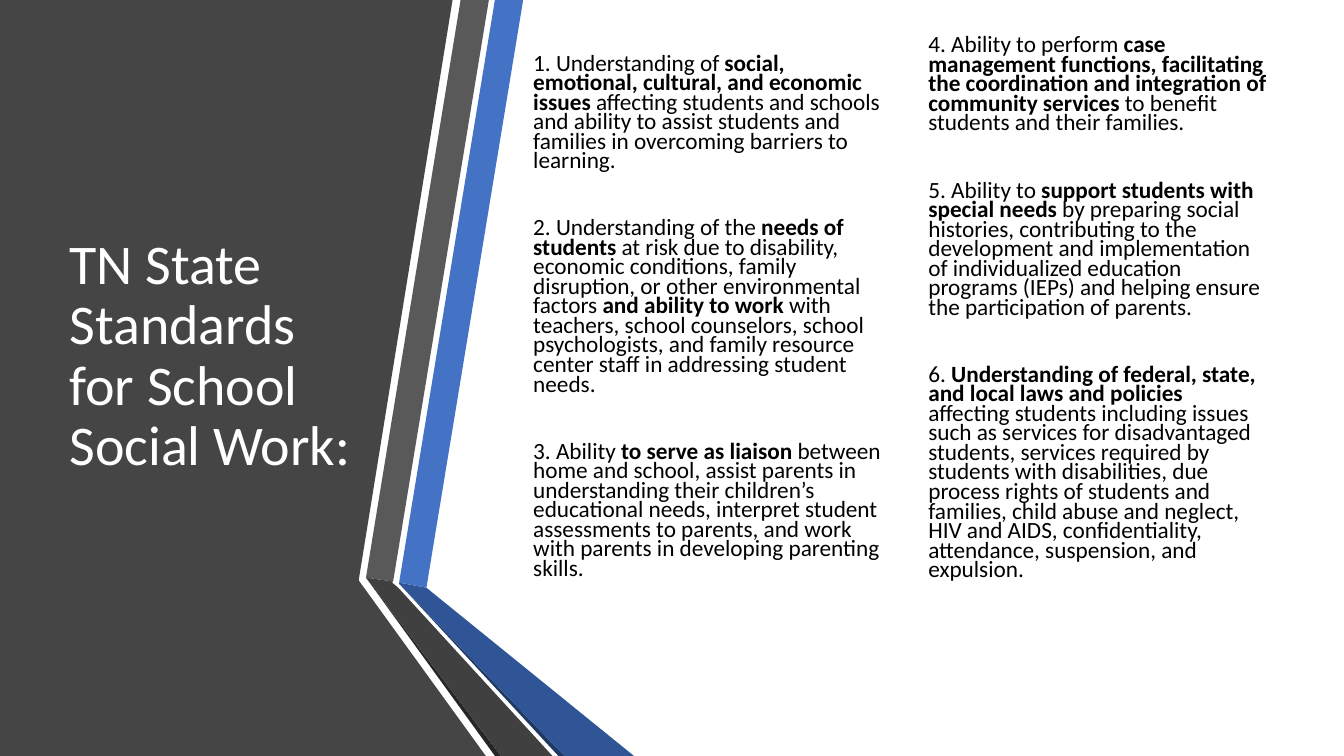
import pptx
import pptx.dml.color
import pptx.enum.text
import pptx.oxml.ns
import pptx.util

LEFT_STANDARDS = [
    "1. Understanding of *social, emotional, cultural, and economic issues* affecting students "
    "and schools and ability to assist students and families in overcoming barriers to learning.",
    "2. Understanding of the *needs of students *at risk due to disability, economic conditions, "
    "family disruption, or other environmental factors *and ability to work *with teachers, "
    "school counselors, school psychologists, and family resource center staff in addressing "
    "student needs.",
    "3. Ability *to serve as liaison* between home and school, assist parents in understanding "
    "their children’s educational needs, interpret student assessments to parents, and work "
    "with parents in developing parenting skills.",
]
RIGHT_STANDARDS = [
    "4. Ability to perform *case management functions, facilitating the coordination and "
    "integration of community services *to benefit students and their families.",
    "5. Ability to *support students with special needs* by preparing social histories, "
    "contributing to the development and implementation of individualized education programs "
    "(IEPs) and helping ensure the participation of parents.",
    "6. *Understanding of federal, state, and local laws and policies *affecting students "
    "including issues such as services for disadvantaged students, services required by "
    "students with disabilities, due process rights of students and families, child abuse and "
    "neglect, HIV and AIDS, confidentiality, attendance, suspension, and expulsion.",
]
PANEL = [(0, 0), (323.3, 0), (256.3, 414), (256.3, 414.7), (347, 540), (0, 540)]
BANDS = [
    ("4472C4", [(285.1, 416.2), (304.6, 419.8), (373.7, 0), (353.5, 0)]),
    ("595959", [(349.2, 0), (329, 0), (261.4, 412.6), (280.8, 415.4)]),
    ("262626", [(261.4, 412.6), (353.5, 540), (357.8, 540)]),
    ("203864", [(285.1, 416.9), (398.9, 540), (403.2, 540)]),
    ("2F5597", [(285.1, 416.9), (403.2, 540), (452.9, 540), (304.6, 419.8), (285.1, 416.2)]),
    ("404040", [(394.6, 540), (284.4, 419.8), (280.1, 416.2), (280.8, 415.4),
                (261.4, 412.6), (357.8, 540)]),
]


def color(value):
    """Turn a hex string into a colour."""
    return pptx.dml.color.RGBColor.from_string(value)


class StandardsSlide:
    """Hold the slide and its text style, and add each kind of element."""

    font_name = "Calibri"
    body_size = 16.6
    space_before = 10
    item_gap = 34

    def __init__(self, presentation):
        """Add a slide with a title and two text placeholders."""
        self.slide = presentation.slides.add_slide(presentation.slide_layouts[3])

    def outline(self, shapes, fill, points):
        """Draw a closed filled polygon."""
        vertices = [(pptx.util.Pt(x), pptx.util.Pt(y)) for x, y in points]
        builder = shapes.build_freeform(*vertices[0])
        builder.add_line_segments(vertices[1:], close=True)
        shape = builder.convert_to_shape()
        shape.shadow.inherit = False
        shape.fill.solid()
        shape.fill.fore_color.rgb = color(fill)
        shape.line.fill.background()

    def bands(self, bands):
        """Draw the folded bands as one group."""
        group = self.slide.shapes.add_group_shape()
        for fill, points in bands:
            self.outline(group.shapes, fill, points)

    def place(self, shape, left, top, width, height):
        """Move a placeholder to the front and return its text frame."""
        self.slide.shapes._spTree.append(shape._element)
        shape.left, shape.top = pptx.util.Pt(left), pptx.util.Pt(top)
        shape.width, shape.height = pptx.util.Pt(width), pptx.util.Pt(height)
        frame = shape.text_frame
        frame.word_wrap = True
        frame.auto_size = pptx.enum.text.MSO_AUTO_SIZE.NONE
        return frame

    def format_run(self, run, size, fill, bold=False):
        """Give a run its font."""
        run.font.name = self.font_name
        run.font.size = pptx.util.Pt(size)
        run.font.bold = bold
        run.font.color.rgb = color(fill)

    def title(self, text, box):
        """Fill the title placeholder."""
        frame = self.place(self.slide.shapes.title, *box)
        frame.text = text
        frame.vertical_anchor = pptx.enum.text.MSO_ANCHOR.MIDDLE
        paragraph = frame.paragraphs[0]
        paragraph.alignment = pptx.enum.text.PP_ALIGN.LEFT
        paragraph.line_spacing = 0.9
        self.format_run(paragraph.runs[0], 40, "FFFFFF")

    def standards(self, index, items, box):
        """Fill a body placeholder, with bold between asterisks."""
        frame = self.place(self.slide.placeholders[index], *box)
        frame.vertical_anchor = pptx.enum.text.MSO_ANCHOR.TOP
        for number, item in enumerate(items):
            paragraph = frame.add_paragraph() if number else frame.paragraphs[0]
            paragraph.line_spacing = 0.7
            paragraph.space_before = pptx.util.Pt(self.item_gap if number else self.space_before)
            properties = paragraph._p.get_or_add_pPr()
            properties.set("marL", "0")
            properties.set("indent", "0")
            properties.append(pptx.oxml.parse_xml(
                "<a:buNone %s/>" % pptx.oxml.ns.nsdecls("a")))
            for position, part in enumerate(item.split("*")):
                run = paragraph.add_run()
                run.text = part
                self.format_run(run, self.body_size, "000000", position % 2 == 1)


def main():
    """Build the slide and save it."""
    presentation = pptx.Presentation()
    presentation.slide_width = pptx.util.Pt(960)
    presentation.slide_height = pptx.util.Pt(540)
    page = StandardsSlide(presentation)
    page.outline(page.slide.shapes, "454545", PANEL)
    page.bands(BANDS)
    page.title("TN State Standards for School Social Work:", (42.5, 54, 219, 402))
    page.standards(1, LEFT_STANDARDS, (373.7, 36, 269.3, 540))
    page.standards(2, RIGHT_STANDARDS, (655.9, 23, 256.3, 439))
    presentation.save("out.pptx")


if __name__ == "__main__":
    main()
